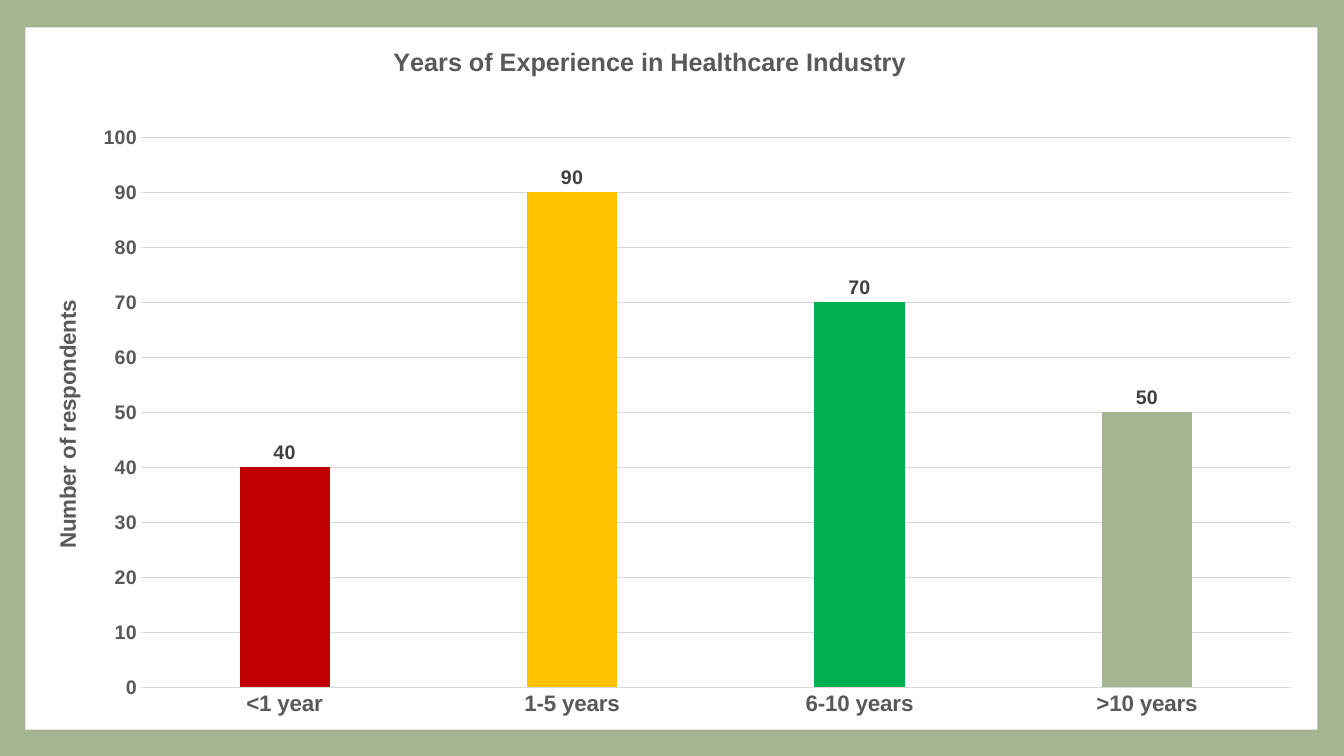
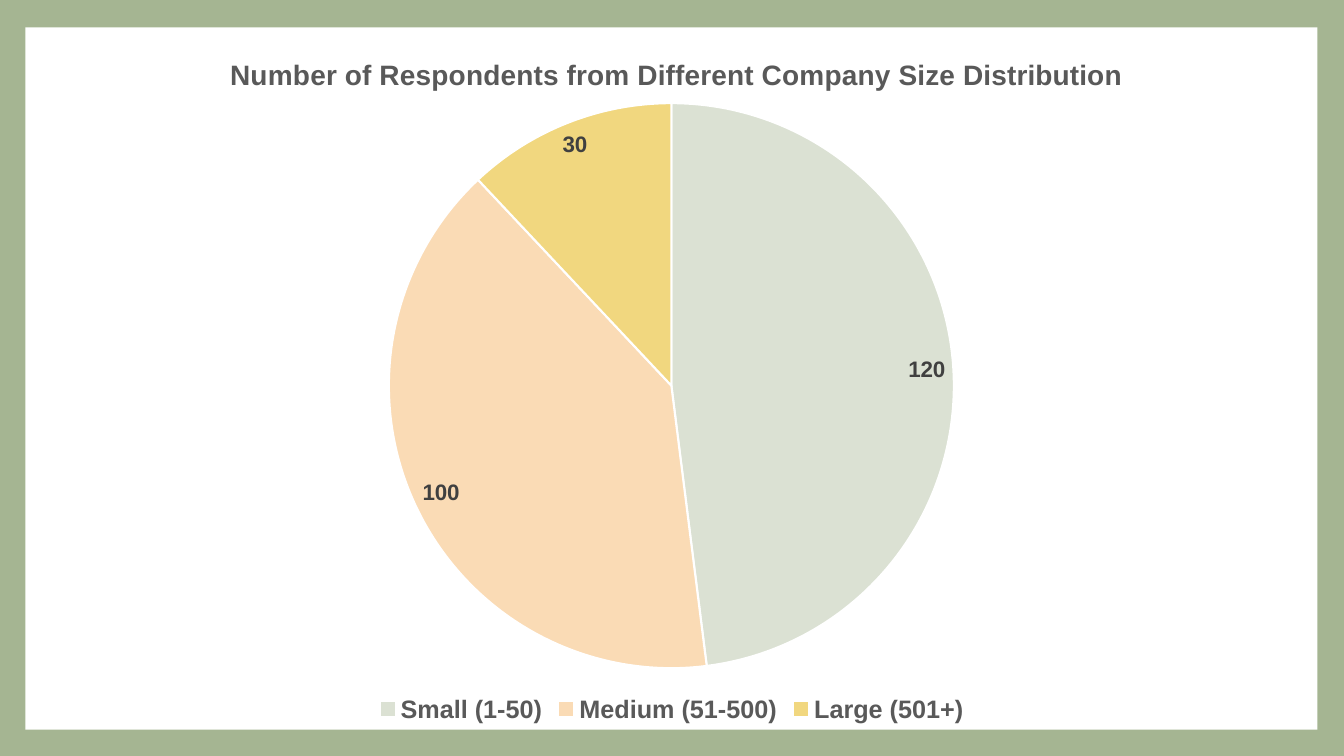
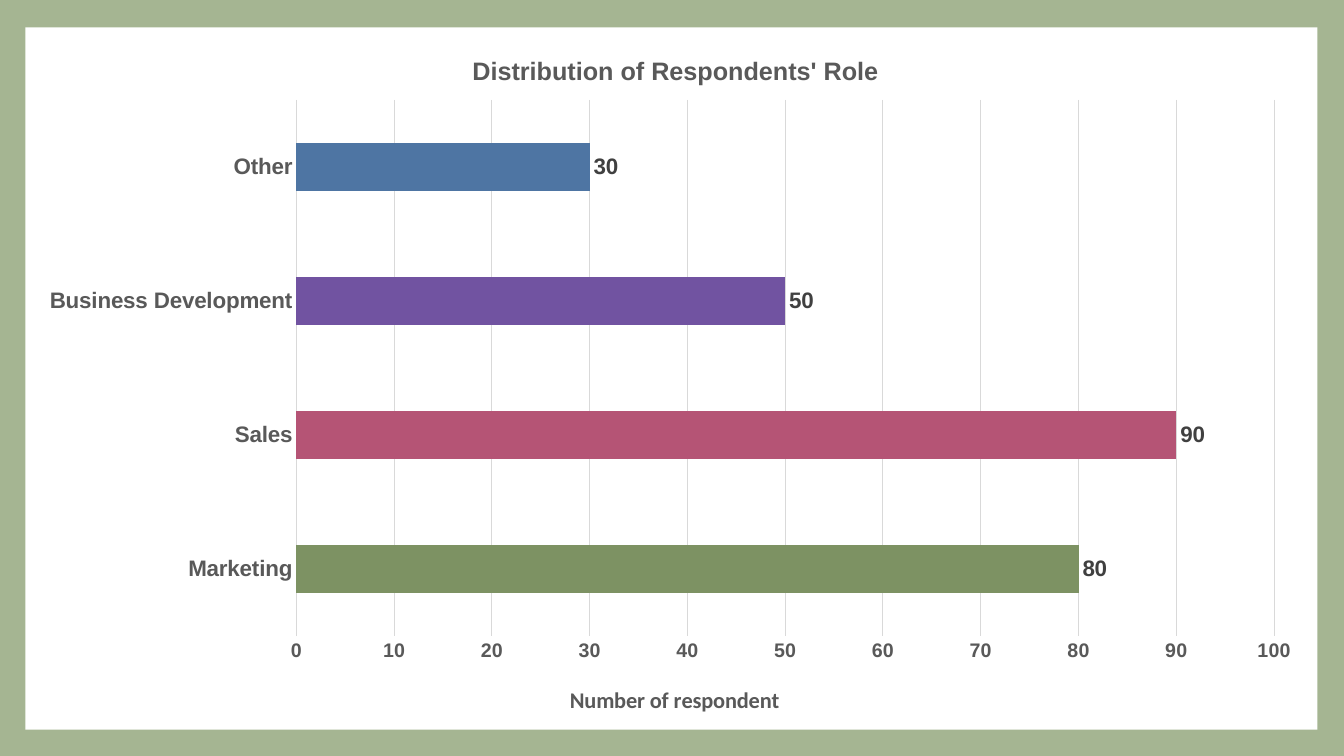
from dataclasses import dataclass
from typing import Optional

from pptx import Presentation
from pptx.chart.axis import CategoryAxis, ValueAxis
from pptx.chart.chart import Chart
from pptx.chart.data import CategoryChartData
from pptx.dml.color import RGBColor
from pptx.enum.chart import XL_CHART_TYPE, XL_LABEL_POSITION, XL_LEGEND_POSITION, XL_TICK_MARK
from pptx.enum.shapes import MSO_SHAPE
from pptx.oxml import parse_xml
from pptx.oxml.ns import nsdecls, qn
from pptx.oxml.xmlchemy import OxmlElement
from pptx.slide import Slide
from pptx.text.text import Font
from pptx.util import Cm, Pt

COLUMN = XL_CHART_TYPE.COLUMN_CLUSTERED
BAR = XL_CHART_TYPE.BAR_CLUSTERED
PIE = XL_CHART_TYPE.PIE
OUTSIDE_END = XL_LABEL_POSITION.OUTSIDE_END
BEST_FIT = XL_LABEL_POSITION.BEST_FIT
LEGEND_BOTTOM = XL_LEGEND_POSITION.BOTTOM
NO_TICKS = XL_TICK_MARK.NONE
RECTANGLE = MSO_SHAPE.RECTANGLE
BLANK_LAYOUT = 6
PANEL_ID = 20


@dataclass(frozen=True)
class Theme:
    frame: str = "A5B592"
    panel: str = "FFFFFF"
    heading: str = "595959"
    label: str = "404040"
    grid: str = "D9D9D9"
    font: str = "Arial"
    base_font: str = "Calibri"
    base_size: int = 10
    value_size: int = 14
    category_size: int = 16
    legend_size: int = 18
    grid_width: float = 0.75
    slice_width: float = 1.5


THEME = Theme()


@dataclass(frozen=True)
class Box:
    left: float
    top: float
    width: float = 0
    height: float = 0


@dataclass(frozen=True)
class Heading:
    text: str
    size: int
    place: Box
    font: str = THEME.font
    vertical: bool = False


@dataclass(frozen=True)
class Survey:
    kind: XL_CHART_TYPE
    area: Box
    plot: Box
    title: Heading
    answers: dict[str, int]
    colors: tuple[str, ...]
    label_size: int
    label_position: XL_LABEL_POSITION
    axis_title: Optional[Heading] = None
    gap: int = 0
    overlap: int = 0


PANEL = Box(0.64, 0.69, 32.56, 17.7)

SURVEYS = (
    Survey(
        kind=COLUMN,
        area=Box(0.66, 0.66, 32.54, 17.73),
        plot=Box(3.55, 3.46, 28.98, 13.86),
        title=Heading("Years of Experience in Healthcare Industry", 18, Box(9.8, 1.03)),
        answers={"<1 year": 40, "1-5 years": 90, "6-10 years": 70, ">10 years": 50},
        colors=("C00000", "FFC000", "00B050", THEME.frame),
        label_size=14,
        label_position=OUTSIDE_END,
        axis_title=Heading("Number of respondents", 16, Box(1.24, 7.46), vertical=True),
        gap=219,
        overlap=-27,
    ),
    Survey(
        kind=PIE,
        area=Box(0.66, 0.71, 32.54, 17.65),
        plot=Box(9.8, 2.6, 14.24, 14.24),
        title=Heading(
            "Number of Respondents from Different Company Size Distribution", 20, Box(5.67, 1.31)
        ),
        answers={"Small (1-50)": 120, "Medium (51-500)": 100, "Large (501+)": 30},
        colors=("DBE1D3", "FADBB5", "F1D77F"),
        label_size=16,
        label_position=BEST_FIT,
    ),
    Survey(
        kind=BAR,
        area=Box(0.61, 0.56, 32.59, 17.83),
        plot=Box(7.47, 2.52, 24.64, 13.51),
        title=Heading("Distribution of Respondents' Role", 18, Box(11.79, 1.25)),
        answers={"Marketing": 80, "Sales": 90, "Business Development": 50, "Other": 30},
        colors=("7D9263", "B55475", "7153A1", "4E75A3"),
        label_size=16,
        label_position=OUTSIDE_END,
        axis_title=Heading(
            "Number of respondent", 16, Box(14.26, 17.15), font=THEME.base_font
        ),
        gap=182,
    ),
)


def rgb(color: str) -> RGBColor:
    return RGBColor.from_string(color)


def set_font(font: Font, size: int, color: str, name: str = THEME.font) -> None:
    font.name = name
    font.size = Pt(size)
    font.bold = True
    font.color.rgb = rgb(color)


def place_part(part, place: Box, area: Box) -> None:
    layout = part.find(qn("c:layout"))
    if layout is None:
        layout = OxmlElement("c:layout")
        part.insert(0, layout)
    manual = OxmlElement("c:manualLayout")
    settings = {"xMode": "edge", "yMode": "edge"}
    if place.width:
        settings = {"layoutTarget": "inner", **settings}
    settings["x"] = (place.left - area.left) / area.width
    settings["y"] = (place.top - area.top) / area.height
    if place.width:
        settings["w"] = place.width / area.width
        settings["h"] = place.height / area.height
    for name, value in settings.items():
        setting = OxmlElement(f"c:{name}")
        setting.set("val", str(value))
        manual.append(setting)
    layout.append(manual)


def write_heading(title, heading: Heading, area: Box) -> None:
    title.text_frame.text = heading.text
    para = title.text_frame.paragraphs[0]
    set_font(para.font, heading.size, THEME.heading, heading.font)
    if heading.vertical:
        title.element.find(f".//{qn('a:bodyPr')}").set("rot", "-5400000")
    place_part(title.element, heading.place, area)


def style_axis(axis: CategoryAxis | ValueAxis, size: int) -> None:
    axis.major_tick_mark = NO_TICKS
    axis.minor_tick_mark = NO_TICKS
    set_font(axis.tick_labels.font, size, THEME.heading)


def style_line(line) -> None:
    line.color.rgb = rgb(THEME.grid)
    line.width = Pt(THEME.grid_width)


def style_axes(chart: Chart, survey: Survey) -> None:
    categories, values = chart.category_axis, chart.value_axis
    style_axis(categories, THEME.category_size)
    style_line(categories.format.line)
    categories.has_major_gridlines = False
    style_axis(values, THEME.value_size)
    values.format.line.fill.background()
    values.has_major_gridlines = True
    style_line(values.major_gridlines.format.line)
    values.minimum_scale, values.maximum_scale, values.major_unit = 0, 100, 10
    write_heading(values.axis_title, survey.axis_title, survey.area)
    plot = chart.plots[0]
    plot.gap_width = survey.gap
    plot.overlap = survey.overlap
    series = plot.series[0]
    series.invert_if_negative = False
    series.format.fill.solid()
    series.format.fill.fore_color.rgb = rgb(THEME.frame)


def style_pie(chart: Chart, survey: Survey) -> None:
    chart.has_legend = True
    chart.legend.position = LEGEND_BOTTOM
    chart.legend.include_in_layout = False
    set_font(chart.legend.font, THEME.legend_size, THEME.heading)
    series = chart.plots[0].series[0]
    for index in range(len(survey.colors)):
        line = series.points[index].format.line
        line.color.rgb = rgb(THEME.panel)
        line.width = Pt(THEME.slice_width)


def add_survey(slide: Slide, survey: Survey) -> None:
    data = CategoryChartData()
    data.categories = list(survey.answers)
    data.add_series("Series 1", list(survey.answers.values()))
    area = survey.area
    chart = slide.shapes.add_chart(
        survey.kind, Cm(area.left), Cm(area.top), Cm(area.width), Cm(area.height), data
    ).chart
    chart.font.name = THEME.base_font
    chart.font.size = Pt(THEME.base_size)
    no_fill = parse_xml(
        f"<c:spPr {nsdecls('c', 'a')}><a:noFill/><a:ln><a:noFill/></a:ln></c:spPr>"
    )
    chart.element.find(qn("c:txPr")).addprevious(no_fill)
    chart.has_legend = False
    write_heading(chart.chart_title, survey.title, area)
    place_part(chart.element.find(f".//{qn('c:plotArea')}"), survey.plot, area)

    plot = chart.plots[0]
    is_pie = survey.kind == PIE
    plot.vary_by_categories = is_pie
    if is_pie:
        style_pie(chart, survey)
    else:
        style_axes(chart, survey)
    for index, color in enumerate(survey.colors):
        fill = plot.series[0].points[index].format.fill
        fill.solid()
        fill.fore_color.rgb = rgb(color)

    labels = plot.series[0].data_labels
    labels.show_value = True
    labels.position = survey.label_position
    set_font(labels.font, survey.label_size, THEME.label)


def set_master(deck: Presentation, slide: Slide) -> None:
    master = deck.slide_master
    master.background.fill.solid()
    master.background.fill.fore_color.rgb = rgb(THEME.frame)
    panel = slide.shapes.add_shape(
        RECTANGLE, Cm(PANEL.left), Cm(PANEL.top), Cm(PANEL.width), Cm(PANEL.height)
    )
    panel.shadow.inherit = False
    panel.fill.solid()
    panel.fill.fore_color.rgb = rgb(THEME.panel)
    panel.line.fill.background()
    panel.element.find(f".//{qn('p:cNvPr')}").set("id", str(PANEL_ID))
    master.shapes.element.insert(2, panel.element)


def main() -> None:
    deck = Presentation()
    deck.slide_width = Cm(33.87)
    deck.slide_height = Cm(19.05)
    layout = deck.slide_layouts[BLANK_LAYOUT]
    slides = [deck.slides.add_slide(layout) for _ in SURVEYS]
    set_master(deck, slides[0])
    for slide, survey in zip(slides, SURVEYS):
        add_survey(slide, survey)
    deck.save("out.pptx")


if __name__ == "__main__":
    main()
